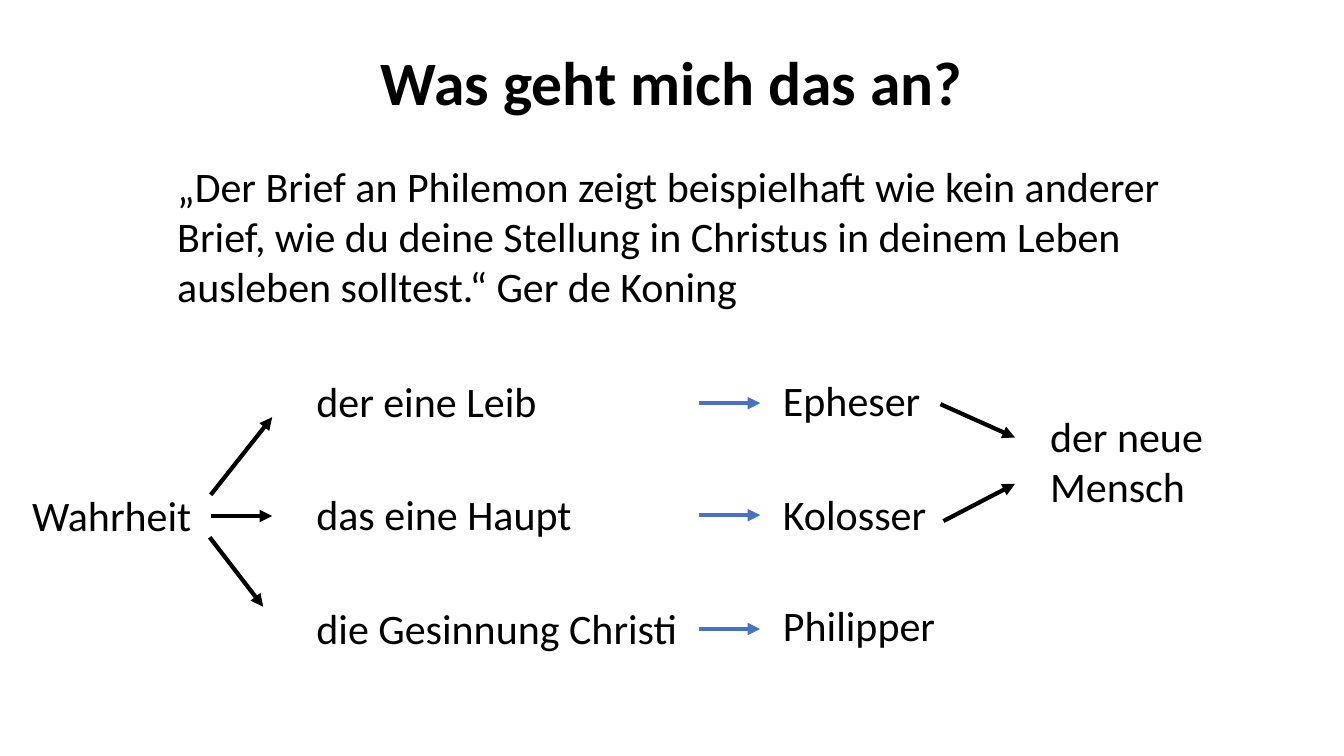
from dataclasses import dataclass

from lxml.etree import SubElement
from pptx import Presentation
from pptx.dml.color import RGBColor
from pptx.enum.shapes import MSO_CONNECTOR as Connector
from pptx.enum.text import MSO_ANCHOR as Anchor, MSO_AUTO_SIZE as AutoSize, PP_ALIGN as Align
from pptx.oxml.ns import qn
from pptx.util import Pt


@dataclass(frozen=True)
class Theme:
    font: str = "Calibri"
    title_size: float = 44
    body_size: float = 30
    line_width: float = 3
    ink: RGBColor = RGBColor(0, 0, 0)
    accent: RGBColor = RGBColor(0x44, 0x72, 0xC4)


class SlideBuilder:
    def __init__(self, slide, theme):
        self.slide = slide
        self.theme = theme

    def text(self, content, left, top, width, height, size=None, bold=False):
        box = self.slide.shapes.add_textbox(Pt(left), Pt(top), Pt(width), Pt(height))
        frame = box.text_frame
        frame.word_wrap = True
        frame.auto_size = AutoSize.SHAPE_TO_FIT_TEXT
        frame.text = content
        font = frame.paragraphs[0].runs[0].font
        font.name = self.theme.font
        font.size = Pt(size or self.theme.body_size)
        font.bold = bold
        font.color.rgb = self.theme.ink
        return frame

    def title(self, content, left, top, width, height):
        frame = self.text(content, left, top, width, height, self.theme.title_size, bold=True)
        frame.auto_size = AutoSize.NONE
        frame.vertical_anchor = Anchor.MIDDLE
        paragraph = frame.paragraphs[0]
        paragraph.alignment = Align.CENTER
        paragraph.line_spacing = 0.9

    def arrow(self, start, end, color):
        connector = self.slide.shapes.add_connector(
            Connector.STRAIGHT, *(Pt(value) for value in (*start, *end)))
        connector.line.width = Pt(self.theme.line_width)
        connector.line.color.rgb = color
        SubElement(connector.line._get_or_add_ln(), qn("a:tailEnd"), type="triangle")
        SubElement(connector._element.spPr, qn("a:effectLst"))


def main():
    presentation = Presentation()
    presentation.slide_width, presentation.slide_height = Pt(960), Pt(540)
    theme = Theme()
    builder = SlideBuilder(
        presentation.slides.add_slide(presentation.slide_layouts[6]), theme)

    builder.title("Was geht mich das an?", 66, 28.8, 828, 64)
    builder.text(
        "„Der Brief an Philemon zeigt beispielhaft wie kein anderer Brief, wie du deine "
        "Stellung in Christus in deinem Leben ausleben solltest.“ Ger de Koning",
        119.5, 110.9, 721.4, 116.6)

    line_height = 44
    builder.text("Wahrheit", 15.8, 346.3, 137.5, line_height)

    # Each row: truth, its width and top, arrow height, letter and its top
    rows = [
        ("der eine Leib", 181, 265, 288, "Epheser", 264.2),
        ("das eine Haupt", 198, 345.6, 368, "Kolosser", 345.6),
        ("die Gesinnung Christi", 286, 427, 449.3, "Philipper", 424.8),
    ]
    for truth, truth_width, truth_top, arrow_y, letter, letter_top in rows:
        builder.text(truth, 218.9, truth_top, truth_width, line_height)
        builder.arrow((499, arrow_y), (543, arrow_y), theme.accent)
        builder.text(letter, 552.2, letter_top, 125.3, line_height)

    builder.text("der neue Mensch", 743, 289.4, 132.5, 80)

    truth_arrows = [
        ((150.5, 353.5), (194.4, 298)),
        ((150.5, 368.6), (194.4, 368.6)),
        ((149.8, 383.8), (188, 433.4)),
    ]
    new_man_arrows = [
        ((671.8, 288.7), (725, 312.5)),
        ((673.9, 372.2), (725, 345.6)),
    ]
    for start, end in truth_arrows + new_man_arrows:
        builder.arrow(start, end, theme.ink)

    presentation.save("out.pptx")


if __name__ == "__main__":
    main()
